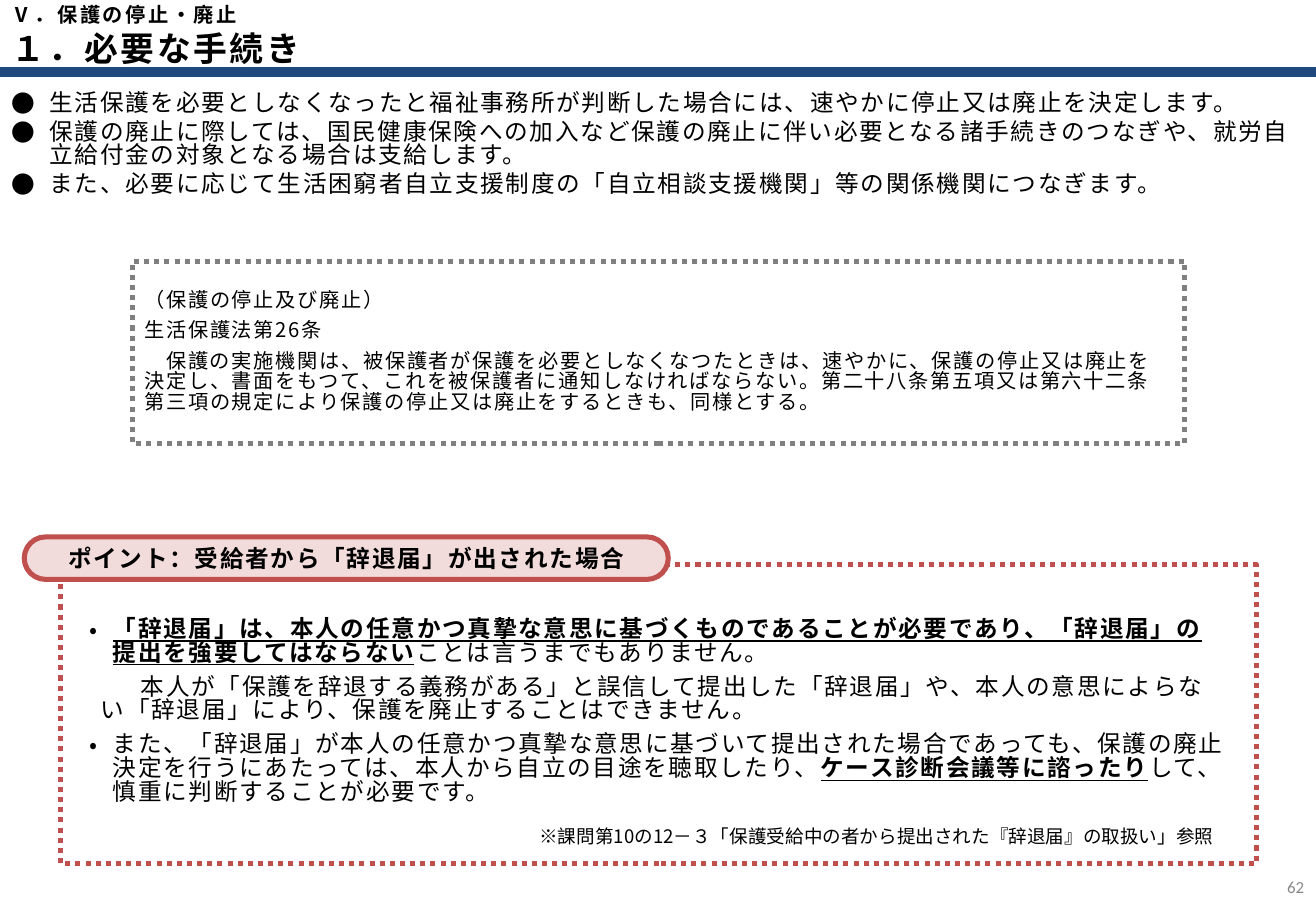
import pptx
import pptx.dml.color
import pptx.enum.dml
import pptx.enum.shapes
import pptx.enum.text
import pptx.oxml.ns
import pptx.util
from lxml import etree

Inches = pptx.util.Inches
Pt = pptx.util.Pt
SHAPE = pptx.enum.shapes.MSO_SHAPE
ALIGN = pptx.enum.text.PP_ALIGN
ANCHOR = pptx.enum.text.MSO_ANCHOR
DOTTED = pptx.enum.dml.MSO_LINE.ROUND_DOT
qn = pptx.oxml.ns.qn

FONT = "Noto Sans CJK JP"
TIGHT = 0.84
COLORS = {"text": "000000", "rule": "1F497D", "law": "808080",
          "point": "C0504D", "pale": "F2DCDB", "number": "898989"}
STRONG = {"bold": True, "underline": True}

# Paragraphs: each is a list of (text, run format)
SUMMARY = [
    [("生活保護を必要としなくなったと福祉事務所が判断した場合には、速やかに停止又は廃止を決定します。", {})],
    [("保護の廃止に際しては、国民健康保険への加入など保護の廃止に伴い必要となる諸手続きのつなぎや、"
      "就労自立給付金の対象となる場合は支給します。", {})],
    [("また、必要に応じて生活困窮者自立支援制度の「自立相談支援機関」等の関係機関につなぎます。", {})],
]
LAW_HEADS = ["（保護の停止及び廃止）", "生活保護法第26条"]
LAW_BODY = ("保護の実施機関は、被保護者が保護を必要としなくなつたときは、速やかに、保護の停止又は廃止を決定し、"
            "書面をもつて、これを被保護者に通知しなければならない。第二十八条第五項又は第六十二条第三項の規定により"
            "保護の停止又は廃止をするときも、同様とする。")
POINT_WILL = [
    ("「辞退届」は、本人の任意かつ真摯な意思に基づくものであることが必要であり、"
     "「辞退届」の提出を強要してはならない", STRONG),
    ("ことは言うまでもありません。", {}),
]
POINT_MISTAKE = [("本人が「保護を辞退する義務がある」と誤信して提出した「辞退届」や、本人の意思によらない"
                  "「辞退届」により、保護を廃止することはできません。", {})]
POINT_REVIEW = [
    ("また、「辞退届」が本人の任意かつ真摯な意思に基づいて提出された場合であっても、保護の廃止決定を"
     "行うにあたっては、本人から自立の目途を聴取したり、", {}),
    ("ケース診断会議等に諮ったり", STRONG),
    ("して、慎重に判断することが必要です。", {}),
]


def rgb(name):
    return pptx.dml.color.RGBColor.from_string(COLORS[name])


def add_run(p, text, size=14, bold=False, underline=False, color="text",
            font=FONT, spacing=0):
    r = p.add_run()
    r.text = text
    r.font.size = Pt(size)
    r.font.bold = bold
    r.font.underline = underline
    r.font.name = font
    r.font.color.rgb = rgb(color)
    rPr = r.font._element
    if spacing:
        rPr.set("spc", str(int(spacing * 100)))
    ea = etree.Element(qn("a:ea"), typeface=font)
    rPr.find(qn("a:latin")).addnext(ea)


def add_text(tf, runs, align=ALIGN.LEFT, before=0, line=None, left=0, indent=0,
             bullet=None, **fmt):
    """Add one paragraph; runs is a string or a list of (text, format)."""
    p = tf.paragraphs[0]
    if p.runs:
        p = tf.add_paragraph()
    p.alignment = align
    p.space_before = Pt(before)
    if line:
        p.line_spacing = line
    pPr = p._p.get_or_add_pPr()
    pPr.set("marL", str(Inches(left)))
    pPr.set("indent", str(Inches(indent)))
    if bullet:
        etree.SubElement(pPr, qn("a:buFont"), typeface=FONT)
        etree.SubElement(pPr, qn("a:buChar"), char=bullet)
    if isinstance(runs, str):
        runs = [(runs, {})]
    for text, extra in runs:
        add_run(p, text, **{**fmt, **extra})


def set_frame(tf, anchor):
    tf.word_wrap = True
    tf.vertical_anchor = anchor
    return tf


def add_box(s, x, y, w, h, anchor=ANCHOR.MIDDLE):
    sp = s.shapes.add_textbox(Inches(x), Inches(y), Inches(w), Inches(h))
    return set_frame(sp.text_frame, anchor)


def add_frame(s, kind, x, y, w, h, color, fill=None, dash=None):
    sp = s.shapes.add_shape(kind, Inches(x), Inches(y), Inches(w), Inches(h))
    sp.shadow.inherit = False
    if fill:
        sp.fill.solid()
        sp.fill.fore_color.rgb = rgb(fill)
    else:
        sp.fill.background()
    sp.line.color.rgb = rgb(color)
    sp.line.width = Pt(3)
    if dash:
        sp.line.dash_style = dash
    set_frame(sp.text_frame, ANCHOR.MIDDLE)
    return sp


def add_rule(s, y, width, color, weight):
    line = s.shapes.add_connector(pptx.enum.shapes.MSO_CONNECTOR.STRAIGHT,
                                  0, Inches(y), width, Inches(y))
    line.line.color.rgb = rgb(color)
    line.line.width = Pt(weight)
    etree.SubElement(line._element.spPr, qn("a:effectLst"))


def main():
    prs = pptx.Presentation()
    prs.slide_width = Inches(10.83)
    prs.slide_height = Inches(7.5)
    s = prs.slides.add_slide(prs.slide_layouts[6])

    # Header and page number
    add_rule(s, 0.59, prs.slide_width, "rule", 6)
    add_text(add_box(s, 10.42, 7.1, 0.41, 0.4), "62", align=ALIGN.RIGHT,
             size=10, font="Calibri", color="number")
    add_text(add_box(s, 0, 0.01, 9.07, 0.21), "Ⅴ．保護の停止・廃止",
             size=12, bold=True, spacing=1.5)
    add_text(add_box(s, 0, 0.2, 9.07, 0.39), "１．必要な手続き",
             size=20, bold=True, spacing=1.5)

    # Summary bullets
    tf = add_box(s, 0, 0.71, 10.83, 1.1, ANCHOR.TOP)
    for runs in SUMMARY:
        add_text(tf, runs, before=3, line=TIGHT, left=0.31, indent=-0.31,
                 bullet="●", spacing=1)

    # Quoted law
    tf = add_frame(s, SHAPE.RECTANGLE, 1.09, 2.15, 8.66, 1.5, "law",
                   dash=DOTTED).text_frame
    law = {"before": 6, "line": TIGHT, "size": 12, "spacing": 1}
    for head in LAW_HEADS:
        add_text(tf, head, **law)
    add_text(tf, LAW_BODY, indent=0.18, **law)

    # Points on the withdrawal notice
    tf = add_box(s, 0.64, 4.76, 9.55, 2.2)
    point = {"before": 6, "line": TIGHT, "spacing": 1}
    item = {"left": 0.19, "indent": -0.19, "bullet": "•"}
    add_text(tf, POINT_WILL, **item, **point)
    add_text(tf, POINT_MISTAKE, left=0.09, indent=0.33, **point)
    add_text(tf, POINT_REVIEW, **item, **point)
    add_frame(s, SHAPE.RECTANGLE, 0.5, 4.65, 9.84, 2.46, "point", dash=DOTTED)

    # Heading pill
    pill = add_frame(s, SHAPE.ROUNDED_RECTANGLE, 0.2, 4.42, 5.3, 0.35, "point",
                     fill="pale")
    pill.adjustments[0] = 0.5
    tf = pill.text_frame
    tf.margin_left = tf.margin_right = Inches(0.08)
    tf.margin_top = tf.margin_bottom = Inches(0.12)
    add_text(tf, "ポイント：受給者から「辞退届」が出された場合",
             align=ALIGN.CENTER, bold=True, spacing=1)

    # Reference
    add_text(add_box(s, 3.45, 6.77, 6.64, 0.29, ANCHOR.TOP),
             "※課問第10の12－３「保護受給中の者から提出された『辞退届』の取扱い」参照",
             align=ALIGN.RIGHT, line=TIGHT, size=11)

    prs.save("out.pptx")


if __name__ == "__main__":
    main()
